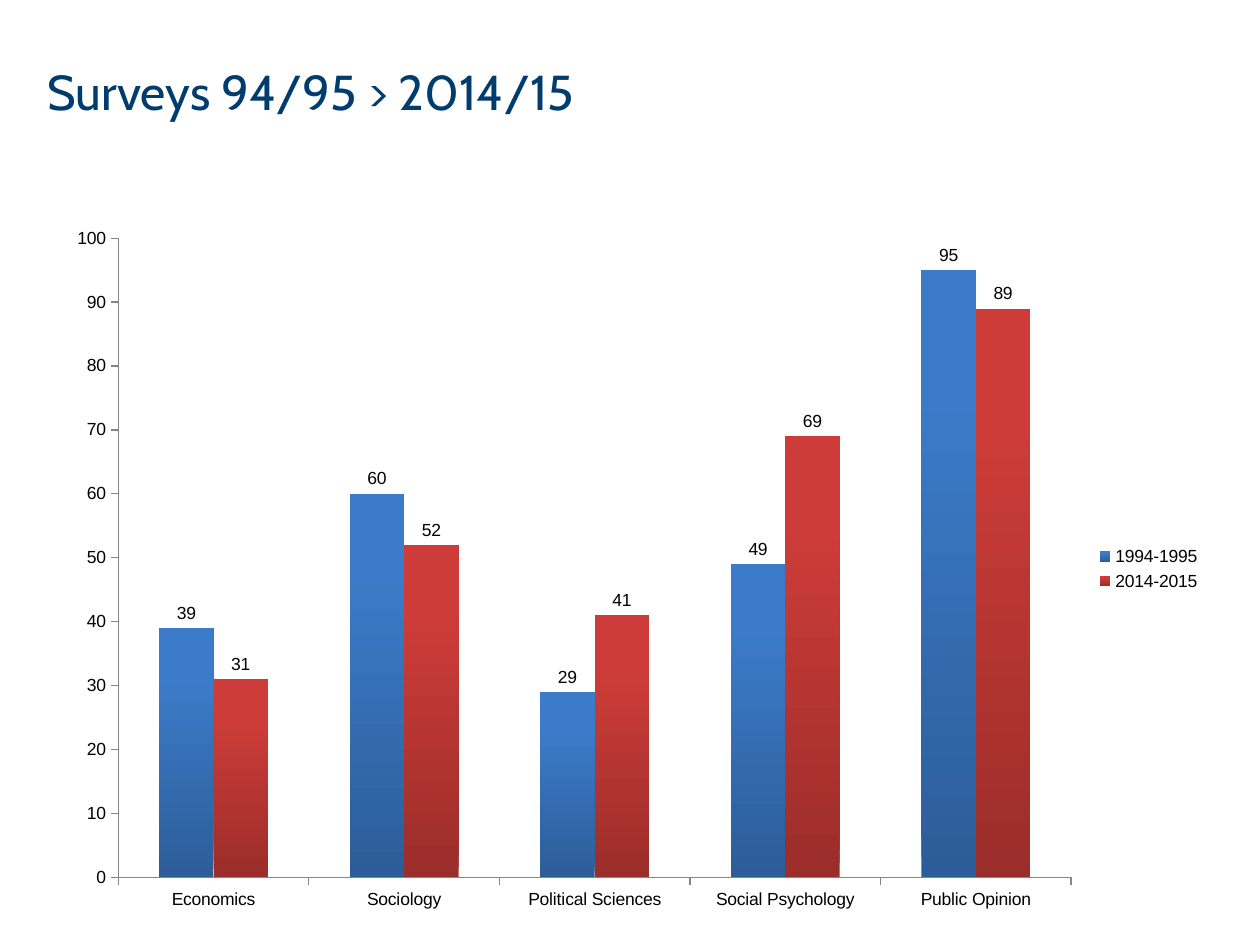
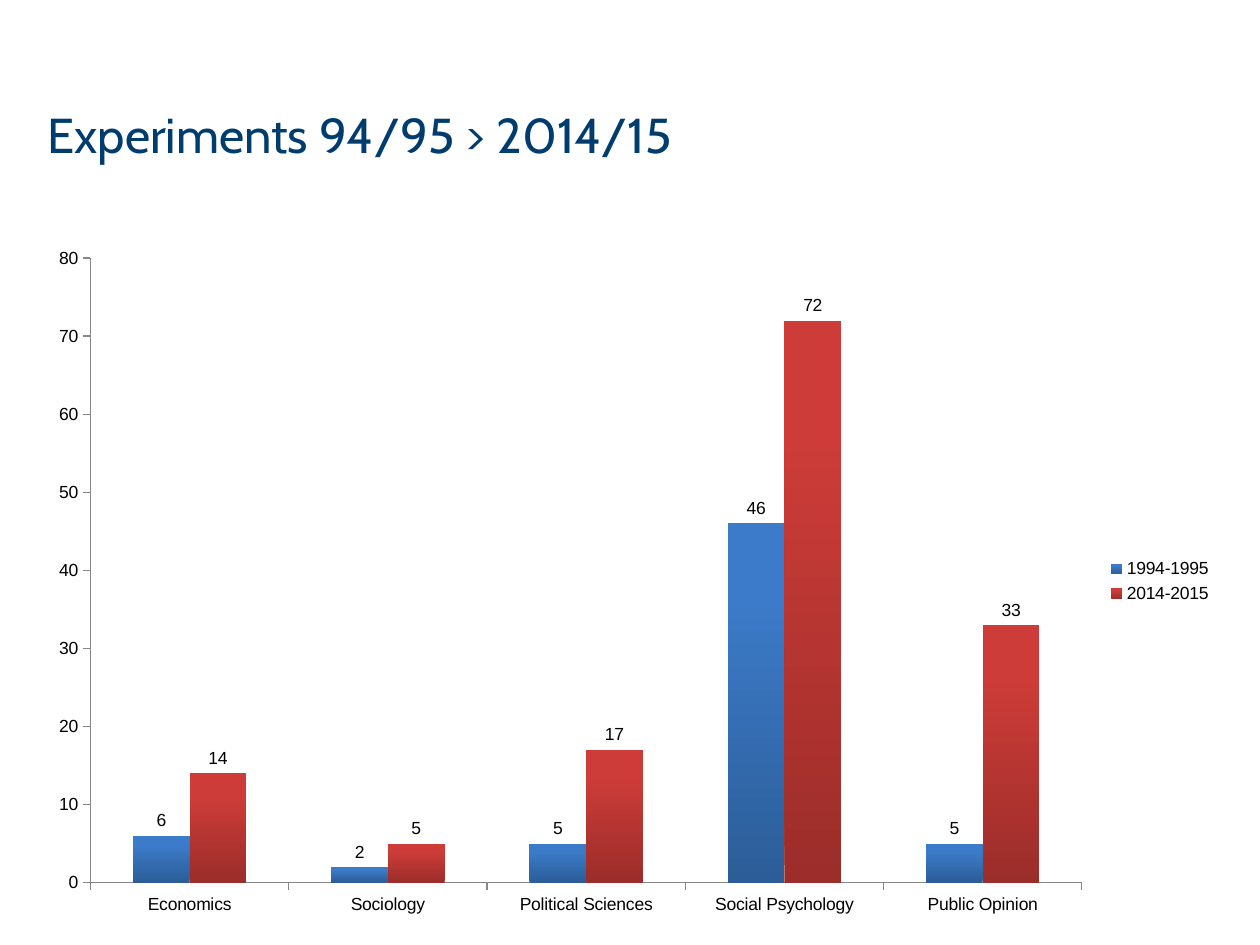
"""Build two slides that compare research methods between 1994-1995 and 2014-2015."""
from dataclasses import dataclass

from pptx import Presentation
from pptx.chart.axis import _BaseAxis
from pptx.chart.chart import Chart
from pptx.chart.data import CategoryChartData
from pptx.chart.series import BarSeries
from pptx.dml.color import RGBColor
from pptx.enum.chart import XL_CHART_TYPE, XL_LABEL_POSITION, XL_LEGEND_POSITION, XL_TICK_MARK
from pptx.enum.text import MSO_ANCHOR
from pptx.slide import Slide
from pptx.util import Emu, Pt

EMU_PER_PX = 9144
BLANK_LAYOUT = 6
DISCIPLINES = ("Economics", "Sociology", "Political Sciences", "Social Psychology", "Public Opinion")
PERIODS = ("1994-1995", "2014-2015")


@dataclass(frozen=True)
class Theme:
    """Colours, fonts and type sizes shared by the slides."""

    background: str = "FFFFFF"
    title_color: str = "003D6E"
    title_font: str = "Cabin"
    title_size: int = 28
    chart_color: str = "000000"
    chart_font: str = "Arial"
    chart_size: int = 10
    axis_color: str = "868686"
    axis_width: float = 0.75
    bar_gradients: tuple[tuple[str, str], ...] = (("2C5D98", "3C7BC9"), ("9B2D2A", "CD3C38"))


@dataclass(frozen=True)
class Frame:
    """A rectangle in px."""

    left: int
    top: int
    width: int
    height: int

    def emu(self) -> tuple[Emu, Emu, Emu, Emu]:
        """Return the rectangle in EMU."""
        return px(self.left), px(self.top), px(self.width), px(self.height)


@dataclass(frozen=True)
class MethodPage:
    """One research method: its title, values by period and placement."""

    title: str
    title_frame: Frame
    chart_frame: Frame
    values: tuple[tuple[int, ...], ...]
    axis_maximum: int


THEME = Theme()
PAGES = (
    MethodPage("Surveys 94/95 > 2014/15", Frame(28, 44, 543, 100), Frame(43, 170, 920, 563),
               ((39, 60, 29, 49, 95), (31, 52, 41, 69, 89)), 100),
    MethodPage("Experiments 94/95 > 2014/15", Frame(28, 78, 543, 100), Frame(28, 186, 944, 551),
               ((6, 2, 5, 46, 5), (14, 5, 17, 72, 33)), 80),
)


def px(length: int) -> Emu:
    """Convert px to EMU."""
    return Emu(length * EMU_PER_PX)


def rgb(value: str) -> RGBColor:
    """Convert a hex string to a colour."""
    return RGBColor.from_string(value)


def draw_title(page: Slide, text: str, frame: Frame) -> None:
    """Add the title in the shared style."""
    box = page.shapes.add_textbox(*frame.emu())
    box.text_frame.word_wrap = True
    box.text_frame.vertical_anchor = MSO_ANCHOR.TOP
    para = box.text_frame.paragraphs[0]
    span = para.add_run()
    span.text = text
    span.font.name = THEME.title_font
    span.font.size = Pt(THEME.title_size)
    span.font.color.rgb = rgb(THEME.title_color)


def style_axis(axis: _BaseAxis) -> None:
    """Give an axis a thin grey line, outer ticks and no gridlines."""
    axis.has_major_gridlines = False
    axis.major_tick_mark = XL_TICK_MARK.OUTSIDE
    axis.minor_tick_mark = XL_TICK_MARK.NONE
    axis.format.line.color.rgb = rgb(THEME.axis_color)
    axis.format.line.width = Pt(THEME.axis_width)


def style_series(series: BarSeries, gradient: tuple[str, str]) -> None:
    """Shade the bars from bottom to top and label their values."""
    fill = series.format.fill
    fill.gradient()
    fill.gradient_angle = 90
    for stop, color, position in zip(fill.gradient_stops, gradient, (0, 0.8)):
        stop.color.rgb = rgb(color)
        stop.position = position
    series.invert_if_negative = False
    labels = series.data_labels
    labels.show_value = True
    labels.position = XL_LABEL_POSITION.OUTSIDE_END


def style_chart(chart: Chart, maximum: int) -> None:
    """Apply the shared chart style."""
    chart.has_title = False
    chart.font.name = THEME.chart_font
    chart.font.size = Pt(THEME.chart_size)
    chart.font.color.rgb = rgb(THEME.chart_color)
    chart.has_legend = True
    chart.legend.position = XL_LEGEND_POSITION.RIGHT
    chart.legend.include_in_layout = False
    for axis in (chart.category_axis, chart.value_axis):
        style_axis(axis)
    chart.value_axis.minimum_scale = 0
    chart.value_axis.maximum_scale = maximum
    chart.value_axis.major_unit = 10
    plot = chart.plots[0]
    plot.vary_by_categories = False
    plot.gap_width = 150
    plot.overlap = 0
    for series, gradient in zip(plot.series, THEME.bar_gradients):
        style_series(series, gradient)


def draw_chart(page: Slide, method: MethodPage) -> None:
    """Add the column chart of a method."""
    data = CategoryChartData(number_format="General")
    data.categories = DISCIPLINES
    for period, values in zip(PERIODS, method.values):
        data.add_series(period, values)
    holder = page.shapes.add_chart(XL_CHART_TYPE.COLUMN_CLUSTERED, *method.chart_frame.emu(), data)
    style_chart(holder.chart, method.axis_maximum)


def main() -> None:
    """Build and save the deck."""
    deck = Presentation()
    deck.slide_width, deck.slide_height = px(1000), px(750)
    for method in PAGES:
        page = deck.slides.add_slide(deck.slide_layouts[BLANK_LAYOUT])
        page.background.fill.solid()
        page.background.fill.fore_color.rgb = rgb(THEME.background)
        draw_title(page, method.title, method.title_frame)
        draw_chart(page, method)
    deck.save("out.pptx")


if __name__ == "__main__":
    main()
